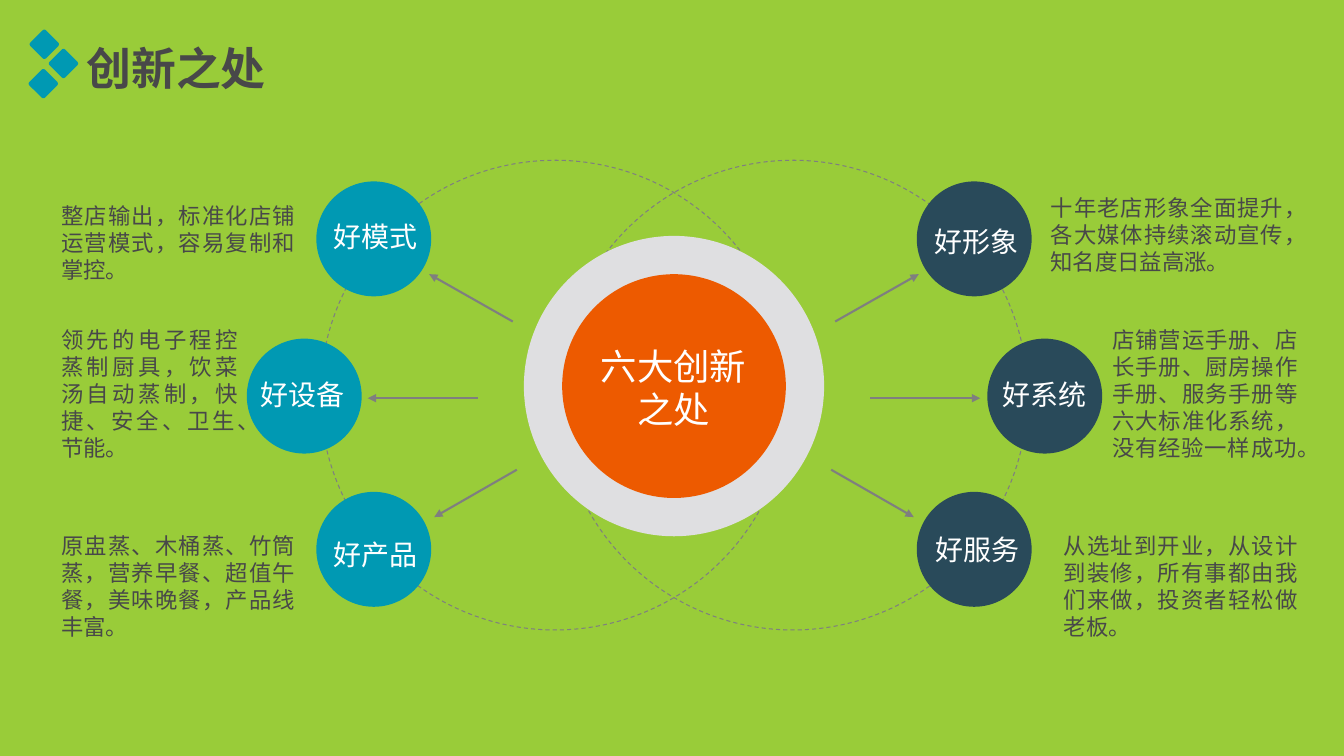
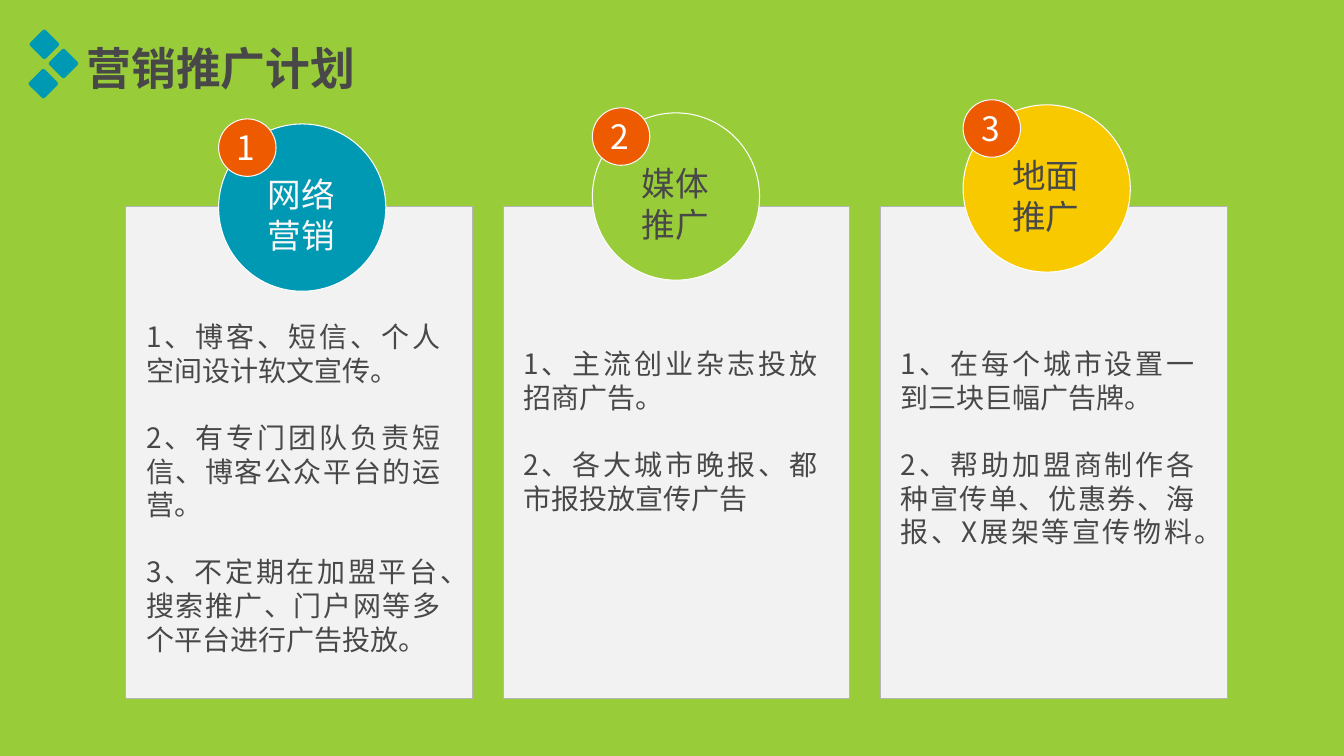
from dataclasses import dataclass

from lxml import etree
from pptx import Presentation
from pptx.dml.color import RGBColor
from pptx.enum.dml import MSO_LINE
from pptx.enum.shapes import MSO_CONNECTOR, MSO_SHAPE
from pptx.enum.text import MSO_ANCHOR, MSO_AUTO_SIZE, PP_ALIGN
from pptx.oxml.ns import qn
from pptx.util import Inches, Pt

OVAL, RECTANGLE, ROUNDED = MSO_SHAPE.OVAL, MSO_SHAPE.RECTANGLE, MSO_SHAPE.ROUNDED_RECTANGLE
LEFT, CENTER, JUSTIFY = PP_ALIGN.LEFT, PP_ALIGN.CENTER, PP_ALIGN.JUSTIFY
STRAIGHT = MSO_CONNECTOR.STRAIGHT
TITLE_ONLY, COMPARISON = 5, 4
COLUMNS, ROWS, CELL = 13.34, 7.5, Inches(1)


@dataclass(frozen=True)
class Theme:
    font: str = "Noto Sans CJK SC"
    background: RGBColor = RGBColor(0x99, 0xCC, 0x39)
    ink: RGBColor = RGBColor(0x48, 0x48, 0x49)
    teal: RGBColor = RGBColor(0x00, 0x99, 0xB3)
    navy: RGBColor = RGBColor(0x29, 0x4A, 0x5A)
    orange: RGBColor = RGBColor(0xED, 0x5A, 0x00)
    yellow: RGBColor = RGBColor(0xF9, 0xC9, 0x00)
    gray: RGBColor = RGBColor(0x7F, 0x7F, 0x7F)
    ring: RGBColor = RGBColor(0xDF, 0xDF, 0xE1)
    card: RGBColor = RGBColor(0xF2, 0xF2, 0xF2)
    card_edge: RGBColor = RGBColor(0xB5, 0xB5, 0xB7)
    white: RGBColor = RGBColor(0xFF, 0xFF, 0xFF)
    off_white: RGBColor = RGBColor(0xF8, 0xF8, 0xF8)
    title_size: int = 32
    hub_size: int = 26
    topic_size: int = 24
    body_size: int = 20
    note_size: int = 16
    line_height: float = 1.2


THEME = Theme()


@dataclass(frozen=True)
class Area:
    left: float
    top: float
    width: float
    height: float

    def lengths(self) -> list[int]:
        return [grid(cells) for cells in (self.left, self.top, self.width, self.height)]


@dataclass(frozen=True)
class Style:
    size: int
    color: RGBColor
    align: PP_ALIGN = LEFT
    bold: bool = False
    gap: float = 0
    wrap: bool = True


@dataclass(frozen=True)
class Node:
    """A topic circle; side is -1 left of the axis and 1 right of it."""
    side: int
    reach: float
    top: float
    label: str
    label_shift: float
    label_drop: float
    note: str
    note_area: Area


@dataclass(frozen=True)
class Arrow:
    tip_reach: float
    tip_row: float
    tail_reach: float
    tail_row: float


@dataclass(frozen=True)
class Card:
    topic: tuple[str, str]
    fill: RGBColor
    ink: RGBColor
    disc_left: float
    disc_top: float
    body_top: float
    body_height: float
    points: tuple[str, ...]


AXIS = 6.69
NODE_SIZE = 1.14
NODES = (
    Node(-1, 2.98, 1.8, "好模式", 0.02, 0.33,
         "整店输出，标准化店铺运营模式，容易复制和掌控。", Area(0.51, 1.96, 2.52, 0.91)),
    Node(-1, 3.67, 3.36, "好设备", -0.02, 0.34,
         "领先的电子程控蒸制厨具，饮菜汤自动蒸制，快捷、安全、卫生、节能。",
         Area(0.51, 3.19, 1.95, 1.45)),
    Node(-1, 2.98, 4.88, "好产品", 0.02, 0.4,
         "原盅蒸、木桶蒸、竹筒蒸，营养早餐、超值午餐，美味晚餐，产品线丰富。",
         Area(0.51, 5.23, 2.52, 1.18)),
    Node(1, 2.98, 1.8, "好形象", 0.02, 0.38,
         "十年老店形象全面提升，各大媒体持续滚动宣传，知名度日益高涨。",
         Area(10.33, 1.88, 2.52, 0.91)),
    Node(1, 3.68, 3.36, "好系统", 0, 0.34,
         "店铺营运手册、店长手册、厨房操作手册、服务手册等六大标准化系统，没有经验一样成功。",
         Area(10.94, 3.19, 2.04, 1.45)),
    Node(1, 2.98, 4.88, "好服务", 0.03, 0.35,
         "从选址到开业，从设计到装修，所有事都由我们来做，投资者轻松做老板。",
         Area(10.46, 5.23, 2.52, 1.18)),
)
ARROWS = (
    Arrow(2.43, 2.72, 1.6, 3.19),
    Arrow(3.04, 3.95, 1.95, 3.95),
    Arrow(2.38, 5.13, 1.56, 4.66),
)
CARDS = (
    Card(("网络", "营销"), THEME.teal, THEME.off_white, 2.17, 1.23, 3.12, 3.47, (
        "1、博客、短信、个人空间设计软文宣传。",
        "2、有专门团队负责短信、博客公众平台的运营。",
        "3、不定期在加盟平台、搜索推广、门户网等多个平台进行广告投放。")),
    Card(("媒体", "推广"), THEME.background, THEME.ink, 5.88, 1.12, 3.39, 2.12, (
        "1、主流创业杂志投放招商广告。",
        "2、各大城市晚报、都市报投放宣传广告")),
    Card(("地面", "推广"), THEME.yellow, THEME.ink, 9.56, 1.04, 3.39, 2.46, (
        "1、在每个城市设置一到三块巨幅广告牌。",
        "2、帮助加盟商制作各种宣传单、优惠券、海报、X展架等宣传物料。")),
)


def grid(cells: float) -> int:
    return round(cells * CELL)


def place(shape, area: Area) -> None:
    shape.left, shape.top, shape.width, shape.height = area.lengths()


def fill_text(shape, lines: tuple[str, ...], style: Style) -> None:
    """Write one plain, unbulleted paragraph per line."""
    frame = shape.text_frame
    frame.auto_size = MSO_AUTO_SIZE.NONE
    frame.word_wrap = style.wrap
    frame.vertical_anchor = MSO_ANCHOR.TOP
    for index, line in enumerate(lines):
        para = frame.add_paragraph() if index else frame.paragraphs[0]
        para.add_run().text = line
        properties = para._p.get_or_add_pPr()
        properties.set("marL", "0")
        properties.set("indent", "0")
        etree.SubElement(properties, qn("a:buNone"))
        para.alignment = style.align
        para.line_spacing = Pt(style.size * THEME.line_height)
        para.space_before = Pt(style.gap if index else 0)
        para.font.name = THEME.font
        para.font.size = Pt(style.size)
        para.font.bold = style.bold
        para.font.color.rgb = style.color
        defaults = properties.find(qn("a:defRPr"))
        etree.SubElement(defaults, qn("a:ea")).set("typeface", THEME.font)


def add_text(page, area: Area, lines: tuple[str, ...], style: Style) -> None:
    fill_text(page.shapes.add_textbox(*area.lengths()), lines, style)


def add_figure(page, kind: MSO_SHAPE, area: Area, fill: RGBColor | None = None,
               edge: RGBColor | None = None, edge_width: float = 0.75):
    shape = page.shapes.add_shape(kind, *area.lengths())
    shape.shadow.inherit = False
    if fill is None:
        shape.fill.background()
    else:
        shape.fill.solid()
        shape.fill.fore_color.rgb = fill
    if edge is None:
        shape.line.fill.background()
    else:
        shape.line.color.rgb = edge
        shape.line.width = Pt(edge_width)
    return shape


def add_disc(page, center: float, middle: float, size: float, fill: RGBColor) -> None:
    add_figure(page, OVAL, Area(center - size / 2, middle - size / 2, size, size), fill)


def add_arrow(page, arrow: Arrow, side: int) -> None:
    line = page.shapes.add_connector(
        STRAIGHT, grid(AXIS + side * arrow.tip_reach), grid(arrow.tip_row),
        grid(AXIS + side * arrow.tail_reach), grid(arrow.tail_row))
    line.line.color.rgb = THEME.gray
    line.line.width = Pt(1.5)
    etree.SubElement(line.line._get_or_add_ln(), qn("a:headEnd")).set("type", "triangle")
    etree.SubElement(line._element.spPr, qn("a:effectLst"))


def add_page(deck, layout: int, title: str):
    """Add a slide with the shared title and its three diamonds."""
    page = deck.slides.add_slide(deck.slide_layouts[layout])
    place(page.shapes.title, Area(0.76, 0.35, 6.53, 0.64))
    fill_text(page.shapes.title, (title,), Style(THEME.title_size, THEME.ink, bold=True))
    side = 0.22
    for center, middle in ((0.44, 0.44), (0.63, 0.63), (0.43, 0.83)):
        diamond = add_figure(page, ROUNDED, Area(center - side / 2, middle - side / 2, side, side),
                             THEME.teal)
        diamond.adjustments[0] = 0.11
        diamond.rotation = 45
    return page


def add_node(page, node: Node) -> None:
    center = AXIS + node.side * node.reach
    add_disc(page, center, node.top + NODE_SIZE / 2, NODE_SIZE,
             THEME.teal if node.side < 0 else THEME.navy)
    width = 1.1
    add_text(page, Area(center + node.label_shift - width / 2, node.top + node.label_drop,
                        width, 0.44),
             (node.label,), Style(THEME.body_size, THEME.white, CENTER))


def add_innovation_page(deck) -> None:
    page = add_page(deck, TITLE_ONLY, "创新之处")
    orbit = 4.66
    for side in (-1, 1):
        center = AXIS + side * 1.18
        ring = add_figure(page, OVAL, Area(center - orbit / 2, 1.59, orbit, orbit),
                          edge=THEME.gray, edge_width=0)
        ring.line.dash_style = MSO_LINE.DASH
    for side in (-1, 1):
        for arrow in ARROWS:
            add_arrow(page, arrow, side)
    for node in NODES:
        add_text(page, node.note_area, (node.note,),
                 Style(THEME.note_size, THEME.ink, JUSTIFY))
        add_node(page, node)
    for size, fill in ((2.98, THEME.ring), (2.22, THEME.orange)):
        add_disc(page, AXIS, 3.83, size, fill)
    add_text(page, Area(5.74, 3.36, 1.89, 0.98), ("六大创新之处",),
             Style(THEME.hub_size, THEME.white, CENTER))


def add_card(page, body, card: Card, number: int, left: float, width: float) -> None:
    add_figure(page, RECTANGLE, Area(left, 2.05, width, 4.88), THEME.card, THEME.card_edge)
    place(body, Area(left + 0.1, card.body_top, 3.12, card.body_height))
    fill_text(body, card.points, Style(THEME.body_size, THEME.ink, JUSTIFY,
                                       gap=THEME.body_size * THEME.line_height))
    page.shapes.element.append(body.element)  # bring the list in front of its card
    x, y = card.disc_left, card.disc_top
    add_figure(page, OVAL, Area(x, y, 1.66, 1.66), card.fill, THEME.white)
    add_text(page, Area(x + 0.39, y + 0.45, 0.88, 0.91), card.topic,
             Style(THEME.topic_size, card.ink, wrap=False))
    add_figure(page, OVAL, Area(x, y - 0.05, 0.57, 0.57), THEME.orange, THEME.off_white)
    add_text(page, Area(x + 0.08, y - 0.02, 0.4, 0.51), (str(number),),
             Style(THEME.topic_size, THEME.white, wrap=False))


def add_marketing_page(deck) -> None:
    page = add_page(deck, COMPARISON, "营销推广计划")
    bodies = [shape for shape in page.placeholders if shape.placeholder_format.idx > 0]
    for spare in bodies[len(CARDS):]:
        spare.element.getparent().remove(spare.element)
    first, last, width = 1.25, 8.74, 3.44
    pitch = (last - first) / (len(CARDS) - 1)
    for index, (card, body) in enumerate(zip(CARDS, bodies)):
        add_card(page, body, card, index + 1, first + index * pitch, width)


def main() -> None:
    deck = Presentation()
    deck.slide_width, deck.slide_height = grid(COLUMNS), grid(ROWS)
    backdrop = deck.slide_master.background.fill
    backdrop.solid()
    backdrop.fore_color.rgb = THEME.background
    add_innovation_page(deck)
    add_marketing_page(deck)
    deck.save("out.pptx")


if __name__ == "__main__":
    main()
